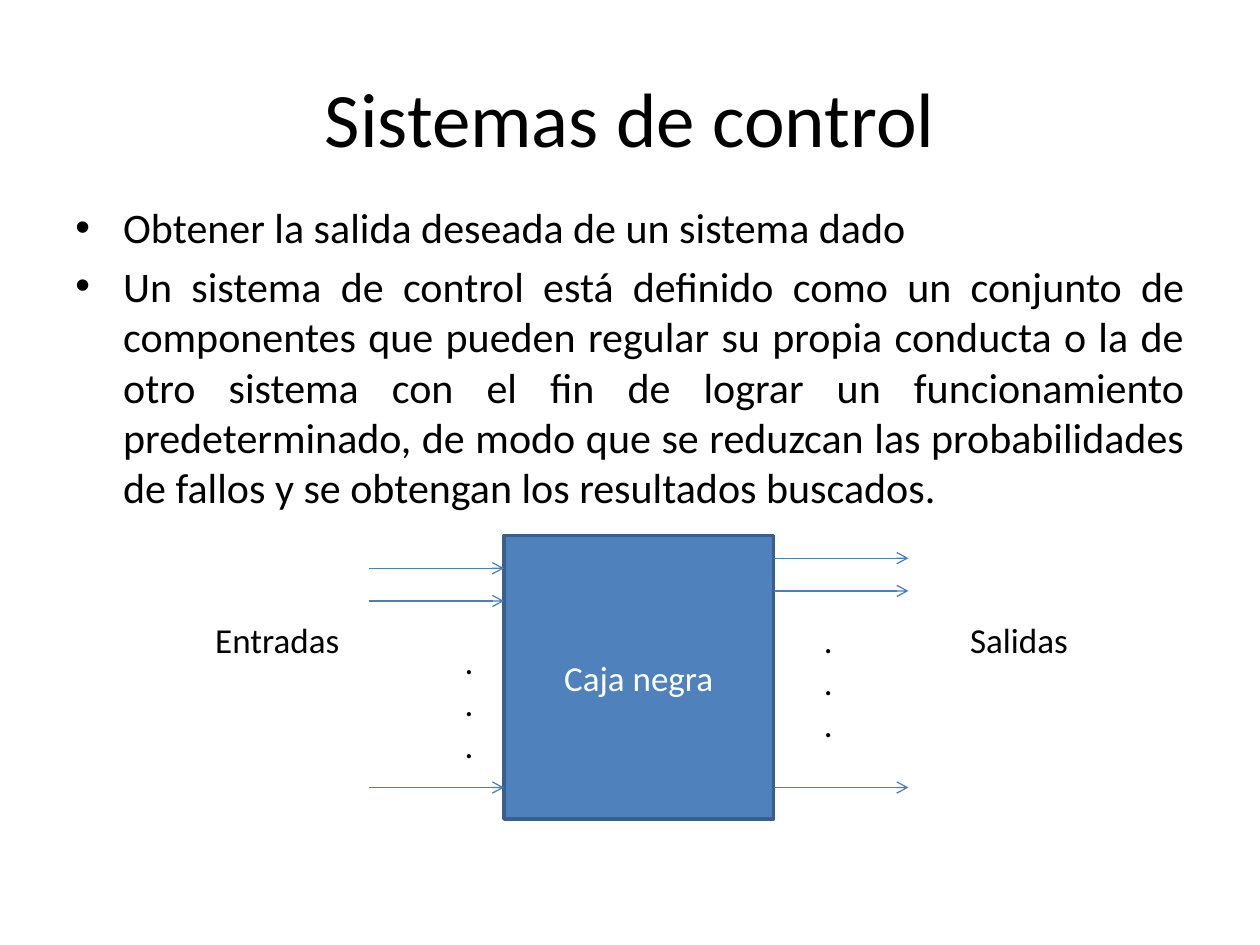
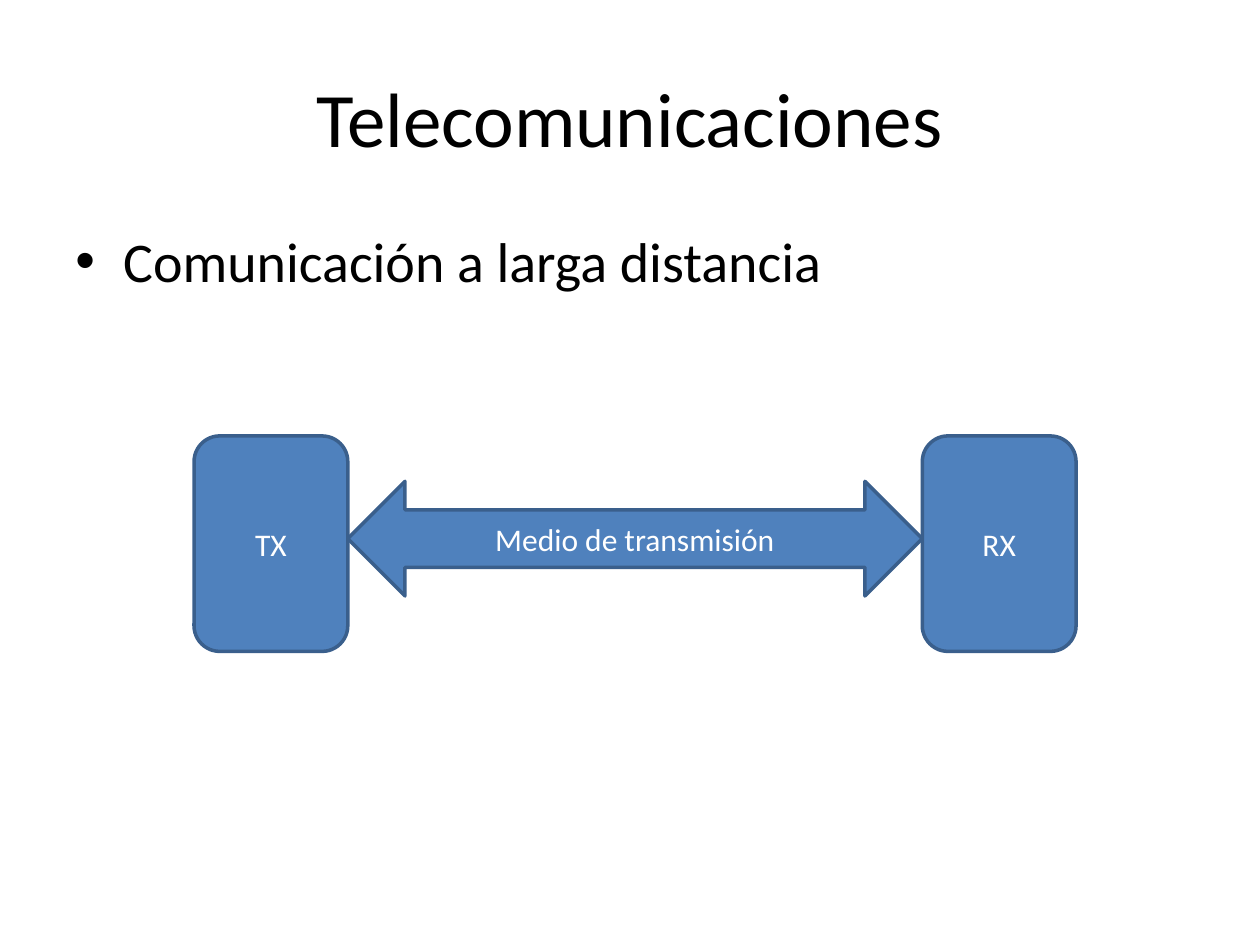
from dataclasses import dataclass
from typing import NamedTuple

from lxml import etree
from pptx import Presentation
from pptx.dml.color import RGBColor
from pptx.enum.shapes import MSO_CONNECTOR, MSO_SHAPE
from pptx.enum.text import MSO_ANCHOR, MSO_AUTO_SIZE, PP_ALIGN
from pptx.oxml.ns import qn
from pptx.util import Pt

RECT, ROUNDED = MSO_SHAPE.RECTANGLE, MSO_SHAPE.ROUNDED_RECTANGLE
DOUBLE_ARROW = MSO_SHAPE.LEFT_RIGHT_ARROW
STRAIGHT = MSO_CONNECTOR.STRAIGHT
LEFT, CENTER, JUSTIFY = PP_ALIGN.LEFT, PP_ALIGN.CENTER, PP_ALIGN.JUSTIFY
TOP, MIDDLE = MSO_ANCHOR.TOP, MSO_ANCHOR.MIDDLE
GROW = MSO_AUTO_SIZE.SHAPE_TO_FIT_TEXT

PX = 9144  # EMU in one px, 100 px to the inch
TITLE_ONLY = 5


@dataclass(frozen=True)
class Theme:
    font: str = "Calibri"
    ink: str = "000000"
    paper: str = "FFFFFF"
    fill: str = "4F81BD"
    outline: str = "3A5F8C"
    arrow: str = "4B7EBC"
    title: int = 44
    lead: int = 32
    body: int = 24
    diagram: int = 20
    link: int = 18
    outline_width: float = 2
    arrow_width: float = 0.75


class Box(NamedTuple):
    left: int
    top: int
    width: int
    height: int

    def inner(self, left, top, width, height):
        return Box(self.left + left, self.top + top, width, height)

    def emu(self):
        return [length * PX for length in self]


THEME = Theme()
SLIDE = Box(0, 0, 1000, 750)
TITLE = Box(50, 30, 900, 125)


def color(value):
    return RGBColor.from_string(value)


def set_all(target, values):
    for name, value in values.items():
        setattr(target, name, value)


def write(frame, lines, size, ink=THEME.ink, align=LEFT, anchor=TOP, wrap=True):
    """Fill a text frame, one paragraph for each line."""
    set_all(frame, {"word_wrap": wrap, "vertical_anchor": anchor})
    for index, line in enumerate(lines):
        para = frame.add_paragraph() if index else frame.paragraphs[0]
        para.alignment = align
        span = para.add_run()
        span.text = line
        set_all(span.font, {"name": THEME.font, "size": Pt(size)})
        span.font.color.rgb = color(ink)


def add_page(deck, title):
    page = deck.slides.add_slide(deck.slide_layouts[TITLE_ONLY])
    page.background.fill.solid()
    page.background.fill.fore_color.rgb = color(THEME.paper)
    heading = page.shapes.title
    set_all(heading, dict(zip(("left", "top", "width", "height"), TITLE.emu())))
    write(heading.text_frame, [title], THEME.title, align=CENTER, anchor=MIDDLE)
    return page


def add_bullets(page, box, lines, size, align=LEFT):
    frame = page.shapes.add_textbox(*box.emu()).text_frame
    write(frame, lines, size, align=align)
    for para in frame.paragraphs:
        para.space_before = Pt(size * 0.2)
        props = para._p.get_or_add_pPr()
        props.set("marL", str(38 * PX))
        props.set("indent", str(-38 * PX))
        font = etree.SubElement(props, qn("a:buFont"))
        font.set("typeface", "Arial")
        etree.SubElement(props, qn("a:buChar")).set("char", "•")


def add_block(group, kind, box, label, size):
    block = group.shapes.add_shape(kind, *box.emu())
    block.shadow.inherit = False
    block.fill.solid()
    block.fill.fore_color.rgb = color(THEME.fill)
    block.line.color.rgb = color(THEME.outline)
    block.line.width = Pt(THEME.outline_width)
    write(block.text_frame, [label], size, THEME.paper, CENTER, MIDDLE)


def add_label(group, box, lines):
    frame = group.shapes.add_textbox(*box.emu()).text_frame
    write(frame, lines, THEME.diagram, wrap=False)
    frame.auto_size = GROW


def add_arrow(group, box):
    left, top, width, height = box.emu()
    arrow = group.shapes.add_connector(STRAIGHT, left, top, left + width, top + height)
    arrow.line.color.rgb = color(THEME.arrow)
    arrow.line.width = Pt(THEME.arrow_width)
    etree.SubElement(arrow.line._get_or_add_ln(), qn("a:tailEnd")).set("type", "arrow")
    etree.SubElement(arrow._element.spPr, qn("a:effectLst"))


def add_black_box(page, box):
    """Block with a column of arrows, dots and a label on each side."""
    group = page.shapes.add_group_shape()
    block_left, block_width, reach = 239, 214, 107
    add_block(group, RECT, box.inner(block_left, 0, block_width, box.height),
              "Caja negra", THEME.diagram)
    # arrow left, arrow heights, dots at, label left, label width, label
    sides = [
        (block_left - reach, (26, 52, 200), (198, 78), 0, 120, "Entradas"),
        (block_left + block_width, (18, 44, 200), (483, 61), 599, 99, "Salidas"),
    ]
    for arrow_left, heights, dots, label_left, label_width, label in sides:
        for height in heights:
            add_arrow(group, box.inner(arrow_left, height, reach, 0))
        add_label(group, box.inner(*dots, 27, 103), ["."] * 3)
        add_label(group, box.inner(label_left, 61, label_width, 40), [label])


def add_link(page, box):
    """Transmitter and receiver joined by the medium."""
    group = page.shapes.add_group_shape()
    end_width, medium_height = 122, 91
    for left, label in ((0, "TX"), (box.width - end_width, "RX")):
        add_block(group, ROUNDED, box.inner(left, 0, end_width, box.height),
                  label, THEME.link)
    medium = box.inner(end_width, 36, box.width - 2 * end_width, medium_height)
    add_block(group, DOUBLE_ARROW, medium, "Medio de transmisión", THEME.link)


def control_page(deck):
    page = add_page(deck, "Sistemas de control")
    add_bullets(page, Box(50, 155, 900, 260), [
        "Obtener la salida deseada de un sistema dado",
        "Un sistema de control está definido como un conjunto de componentes "
        "que pueden regular su propia conducta o la de otro sistema con el fin "
        "de lograr un funcionamiento predeterminado, de modo que se reduzcan "
        "las probabilidades de fallos y se obtengan los resultados buscados.",
    ], THEME.body, JUSTIFY)
    add_black_box(page, Box(161, 425, 698, 225))


def telecom_page(deck):
    page = add_page(deck, "Telecomunicaciones")
    add_bullets(page, Box(50, 175, 900, 106), ["Comunicación a larga distancia"],
                THEME.lead)
    add_link(page, Box(154, 346, 700, 171))


def main():
    deck = Presentation()
    deck.slide_width, deck.slide_height = SLIDE.emu()[2:]
    control_page(deck)
    telecom_page(deck)
    deck.save("out.pptx")


if __name__ == "__main__":
    main()
